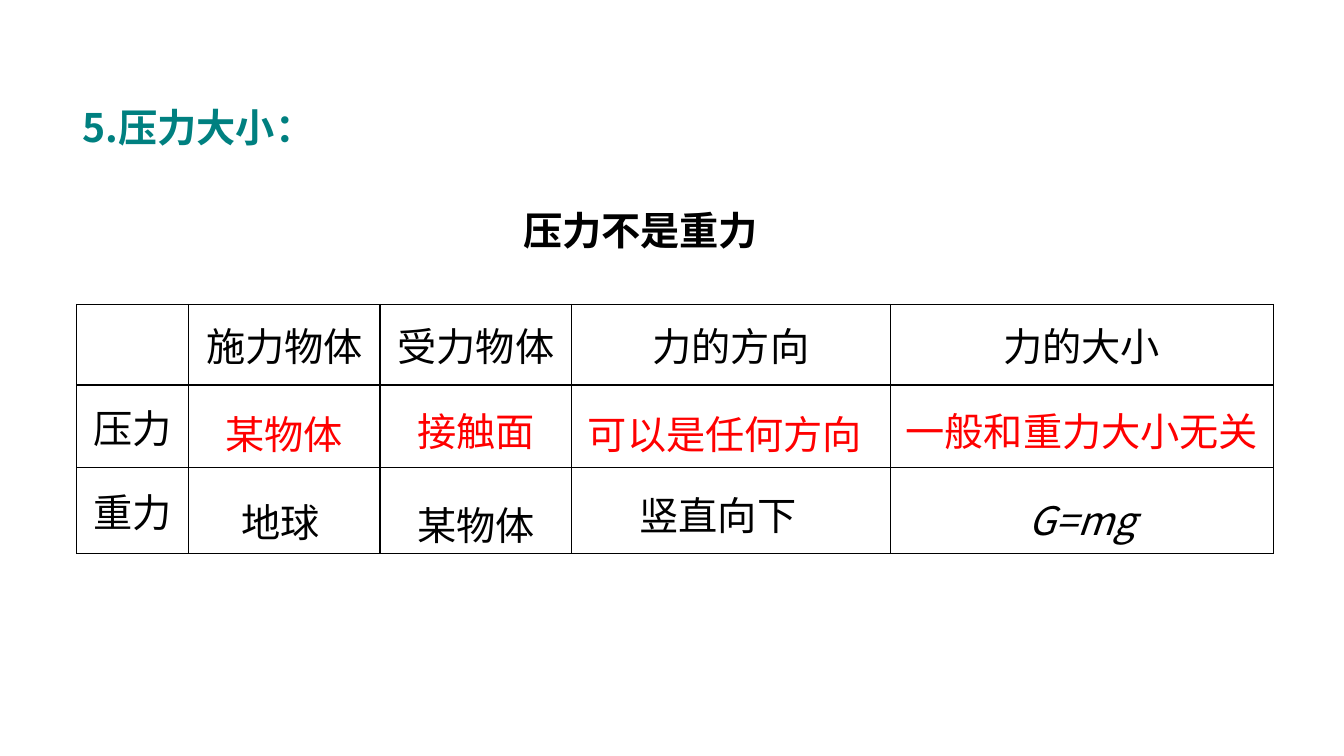
from itertools import accumulate

from lxml.etree import SubElement
from pptx import Presentation
from pptx.dml.color import RGBColor
from pptx.enum.text import MSO_ANCHOR as Anchor, PP_ALIGN as Align
from pptx.oxml.ns import qn
from pptx.util import Inches, Pt

COLORS = {"black": "000000", "teal": "008080", "red": "FF0000"}
FONT = "Noto Sans CJK SC"
SLIDE_WIDTH, SLIDE_HEIGHT = 13.33, 7.5
LINE_HEIGHT = 0.57
COLUMNS = [1.11, 1.9, 1.9, 3.16, 3.8]
ROWS = [0.8, 0.82, 0.85]
HEADERS = ["", "施力物体", "受力物体", "力的方向", "力的大小"]
FORCES = ["压力", "重力"]
ANSWERS = [
    (2, 1, 2.02, -0.04, 0.25, "地球", "black"),
    (2, 2, 2.8, 0, 0.28, "某物体", "black"),
    (1, 1, 2.78, 0, 0.2, "某物体", "red"),
    (1, 2, 2.67, 0, 0.17, "接触面", "red"),
    (1, 3, 3.03, -0.06, 0.2, "可以是任何方向", "red"),
    (2, 3, 2.89, -0.13, 0.19, "竖直向下", "black"),
    (1, 4, 3.8, 0, 0.17, "一般和重力大小无关", "red"),
    (2, 4, 2.56, 0, 0.23, "G=mg", "black"),
]


def write(frame, text, color="black", align=Align.CENTER, bold=False, italic=False):
    """Write one styled paragraph into a text frame and return it."""
    frame.word_wrap = True
    para = frame.paragraphs[0]
    para.text = text
    para.alignment = align
    para.space_before = Pt(0)
    font = para.font
    font.size, font.bold, font.italic = Pt(28), bold, italic
    font.color.rgb = RGBColor.from_string(COLORS[color])
    font.name = FONT
    SubElement(font._element, qn("a:ea"), typeface=FONT)
    return para


def add_label(page, box, text, color="black", **style):
    """Add a text box at the given left, top, width and height."""
    label = page.shapes.add_textbox(*map(Inches, box))
    return write(label.text_frame, text, color, **style)


def place_title(page, box):
    """Move the title placeholder into its box and style it."""
    title = page.shapes.title
    title.left, title.top, title.width, title.height = map(Inches, box)
    title.text_frame.vertical_anchor = Anchor.TOP
    write(title.text_frame, "5.压力大小：", "teal", align=Align.LEFT, bold=True)


def add_borders(cell):
    """Draw thin black lines on all four sides of a cell."""
    properties = cell._tc.get_or_add_tcPr()
    for position, side in enumerate(("lnL", "lnR", "lnT", "lnB")):
        line = properties.makeelement(qn(f"a:{side}"), {"w": str(Pt(1))})
        fill = SubElement(line, qn("a:solidFill"))
        SubElement(fill, qn("a:srgbClr"), val=COLORS["black"])
        properties.insert(position, line)


def add_comparison(page, left, top):
    """Add the table of forces and lay the answers over its cells."""
    size = sum(COLUMNS), sum(ROWS)
    frame = page.shapes.add_table(
        len(ROWS), len(COLUMNS), *map(Inches, (left, top, *size)))
    table = frame.table
    table.first_row = table.horz_banding = False
    for column, width in zip(table.columns, COLUMNS):
        column.width = Inches(width)
    for row, height in zip(table.rows, ROWS):
        row.height = Inches(height)
    for cell in table.iter_cells():
        cell.fill.background()
        cell.vertical_anchor = Anchor.MIDDLE
        cell.margin_left = cell.margin_right = Inches(0.13)
        add_borders(cell)
    for index, header in enumerate(HEADERS[1:], 1):
        write(table.cell(0, index).text_frame, header)
    for index, force in enumerate(FORCES, 1):
        write(table.cell(index, 0).text_frame, force)

    lefts = list(accumulate(COLUMNS, initial=left))
    tops = list(accumulate(ROWS, initial=top))
    for row, column, width, shift, drop, text, color in ANSWERS:
        center = lefts[column] + COLUMNS[column] / 2 + shift
        box = center - width / 2, tops[row] + drop, width, LINE_HEIGHT
        add_label(page, box, text, color, italic=text == "G=mg")


def main():
    """Build the slide comparing pressure force and gravity."""
    deck = Presentation()
    deck.slide_width, deck.slide_height = Inches(SLIDE_WIDTH), Inches(SLIDE_HEIGHT)
    page = deck.slides.add_slide(deck.slide_layouts[5])
    place_title(page, (0.72, 0.97, 6.89, LINE_HEIGHT))
    heading = add_label(page, (5.09, 1.9, 3.07, 0.62), "压力不是重力",
                        align=Align.LEFT, bold=True)
    heading.line_spacing = 1.2
    add_comparison(page, 0.76, 3.02)
    deck.save("out.pptx")


if __name__ == "__main__":
    main()
